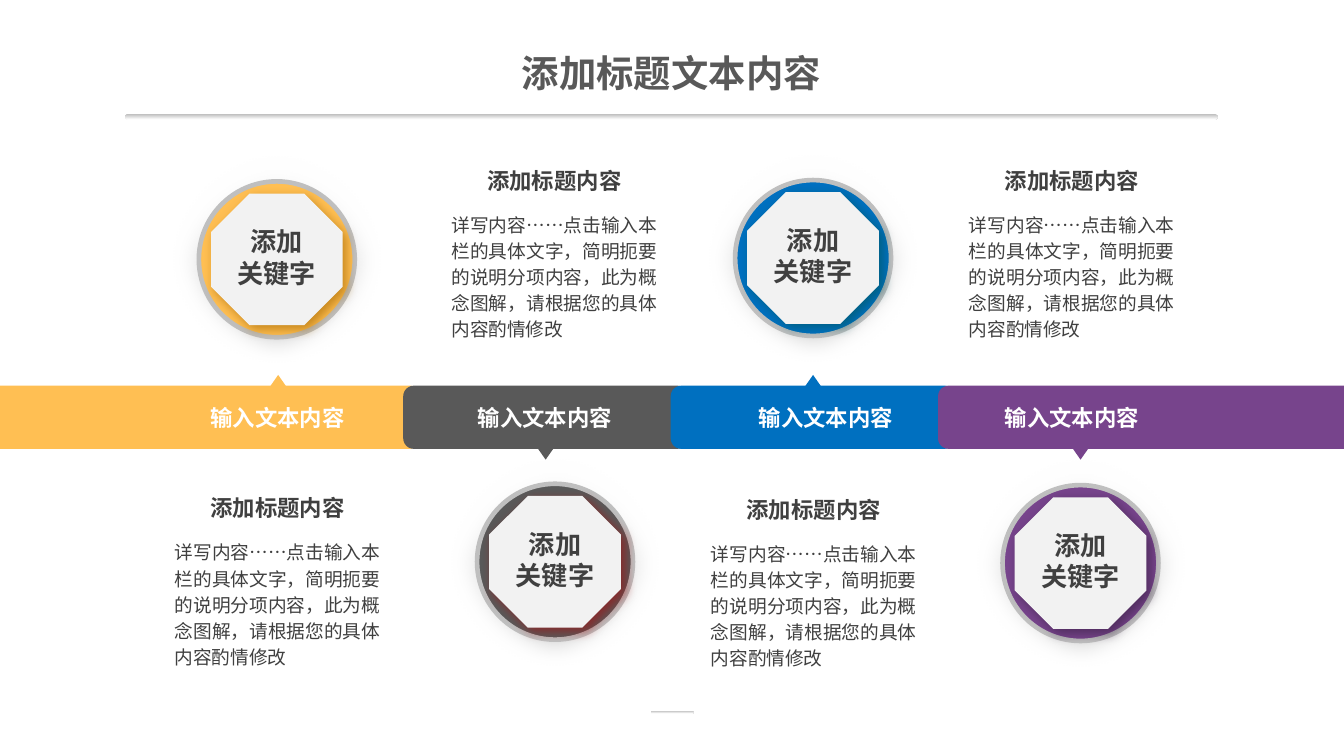
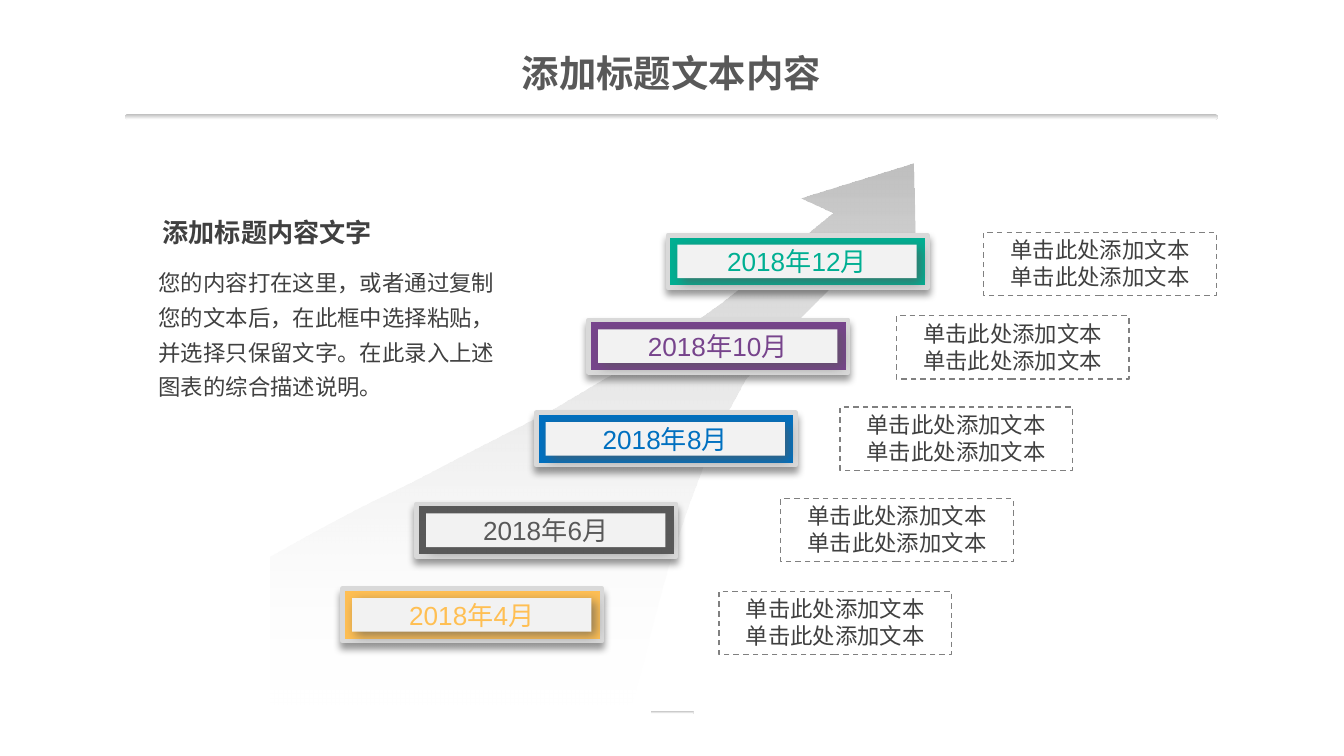
from lxml import etree
from pptx import Presentation
from pptx.dml.color import RGBColor
from pptx.enum.dml import MSO_LINE
from pptx.enum.shapes import MSO_SHAPE
from pptx.enum.text import MSO_ANCHOR, MSO_AUTO_SIZE, PP_ALIGN
from pptx.oxml.ns import qn
from pptx.util import Inches, Pt

ROUNDED, OVAL = MSO_SHAPE.ROUNDED_RECTANGLE, MSO_SHAPE.OVAL
TRIANGLE, OCTAGON, RECTANGLE = MSO_SHAPE.ISOSCELES_TRIANGLE, MSO_SHAPE.OCTAGON, MSO_SHAPE.RECTANGLE
LEFT, CENTER, JUSTIFY = PP_ALIGN.LEFT, PP_ALIGN.CENTER, PP_ALIGN.JUSTIFY
TOP, MIDDLE = MSO_ANCHOR.TOP, MSO_ANCHOR.MIDDLE
GROW, FIXED = MSO_AUTO_SIZE.SHAPE_TO_FIT_TEXT, MSO_AUTO_SIZE.NONE
DASH = MSO_LINE.DASH

WHITE = RGBColor(0xFF, 0xFF, 0xFF)
SILVER = RGBColor(0xBF, 0xBF, 0xBF)
PALE = RGBColor(0xF2, 0xF2, 0xF2)
FRAME = RGBColor(0xD9, 0xD9, 0xD9)
MID_GRAY = RGBColor(0x80, 0x80, 0x80)
BODY = RGBColor(0x40, 0x40, 0x40)
GRAY = RGBColor(0x59, 0x59, 0x59)
ORANGE = RGBColor(0xFF, 0xBF, 0x53)
BLUE = RGBColor(0x00, 0x70, 0xC0)
PURPLE = RGBColor(0x77, 0x44, 0x8C)
GREEN = RGBColor(0x00, 0xAF, 0x92)
BLACK = RGBColor(0x00, 0x00, 0x00)
BROWN = RGBColor(0xA9, 0x6A, 0x00)
RED = RGBColor(0xA2, 0x10, 0x11)
TEAL = RGBColor(0x00, 0x59, 0x62)
PLUM = RGBColor(0x3C, 0x22, 0x46)

LATIN_FONT = "Arial"
CJK_FONT = "Noto Sans CJK SC"


def style_shape(shape, fill=None, gradient=None, line=None, width=2.5, shadow=None):
    shape.shadow.inherit = False
    if gradient:
        shape.fill.gradient()
        shape.fill.gradient_angle = 270
        for stop, color, position in zip(shape.fill.gradient_stops, gradient, (0, 1)):
            stop.color.rgb = color
            stop.position = position
    elif fill is None:
        shape.fill.background()
    else:
        shape.fill.solid()
        shape.fill.fore_color.rgb = fill
    if line is None:
        shape.line.fill.background()
    else:
        shape.line.color.rgb = line
        shape.line.width = Pt(width)
    if shadow:
        color, opacity, blur, distance, angle = shadow
        effects = shape._element.spPr.find(qn("a:effectLst"))
        outer = etree.SubElement(effects, qn("a:outerShdw"), blurRad=str(Pt(blur)),
                                 dist=str(Pt(distance)), dir=str(angle * 60000),
                                 algn="ctr", rotWithShape="0")
        tint = etree.SubElement(outer, qn("a:srgbClr"), val=str(color))
        etree.SubElement(tint, qn("a:alpha"), val=str(opacity * 1000))
    return shape


def write_text(shape, lines, size, color, bold=False, align=CENTER, font=CJK_FONT,
               insets=(0, 0), anchor=TOP, auto_size=GROW, spacing=None):
    frame = shape.text_frame
    horizontal, vertical = (Inches(inset) for inset in insets)
    frame_format = {"word_wrap": True, "auto_size": auto_size, "vertical_anchor": anchor,
                    "margin_left": horizontal, "margin_right": horizontal,
                    "margin_top": vertical, "margin_bottom": vertical}
    for name, value in frame_format.items():
        setattr(frame, name, value)
    frame.text = "\n".join(lines)
    for paragraph in frame.paragraphs:
        paragraph.alignment = align
        paragraph.line_spacing = spacing
        run = paragraph.runs[0]
        for name, value in {"size": Pt(size), "bold": bold, "name": font}.items():
            setattr(run.font, name, value)
        run.font.color.rgb = color
        etree.SubElement(run._r.get_or_add_rPr(), qn("a:ea"), typeface=CJK_FONT)


presentation = Presentation()
presentation.slide_width = Inches(10)
presentation.slide_height = Inches(10 * 9 / 16)
blank = presentation.slide_layouts[6]

slides = []
for number in range(2):
    slide = presentation.slides.add_slide(blank)
    for left, top, width, height in ((0.93, 0.85, 8.13, 0.04), (4.84, 5.29, 0.32, 0.02)):
        rule = slide.shapes.add_shape(ROUNDED, Inches(left), Inches(top), Inches(width), Inches(height))
        rule.adjustments[0] = 0.5
        style_shape(rule, gradient=(SILVER, WHITE))
    title = slide.shapes.add_textbox(Inches(3.07), Inches(0.33), Inches(3.85), Inches(0.41))
    write_text(title, ["添加标题文本内容"], 20, GRAY, bold=True, font=LATIN_FONT, insets=(0.07, 0.04))
    slides.append(slide)
band_slide, arrow_slide = slides

shapes = band_slide.shapes
segments = [
    (ORANGE, BROWN, -0.12, 3.25, 2.0, 2.79, 0, 1.41, (1.26, 1.13), (1.3, 4.0)),
    (GRAY, RED, 3.0, 2.12, 3.99, 3.32, 180, 3.4, (3.33, 3.38), (3.36, 1.56)),
    (BLUE, TEAL, 4.99, 2.12, 5.98, 2.79, 0, 5.49, (5.25, 1.12), (5.29, 4.01)),
    (PURPLE, PLUM, 6.98, 3.14, 7.97, 3.32, 180, 7.32, (7.24, 3.39), (7.21, 1.56)),
]
for (color, shade, bar_left, bar_width, pointer_left, pointer_top, turn, label_left,
     (disc_left, disc_top), (detail_left, detail_top)) in segments:
    bar = shapes.add_shape(ROUNDED, Inches(bar_left), Inches(2.87), Inches(bar_width), Inches(0.47))
    style_shape(bar, fill=color)
    pointer = shapes.add_shape(TRIANGLE, Inches(pointer_left), Inches(pointer_top), Inches(0.14), Inches(0.1))
    pointer.rotation = turn
    style_shape(pointer, fill=color)

    label = shapes.add_textbox(Inches(label_left), Inches(3.01), Inches(1.31), Inches(0.2))
    write_text(label, ["输入文本内容"], 12, WHITE, bold=True)
    detail = shapes.add_textbox(Inches(detail_left), Inches(detail_top), Inches(1.53), Inches(0.98))
    write_text(detail, ["详写内容……点击输入本栏的具体文字，简明扼要的说明分项内容，此为概念图解，请根据您的具体内容酌情修改"],
               10, BODY, align=JUSTIFY, spacing=Pt(14))
    heading = shapes.add_textbox(Inches(detail_left + 0.11), Inches(detail_top - 0.32), Inches(1.31), Inches(0.2))
    write_text(heading, ["添加标题内容"], 12, BODY, bold=True)

    halo = shapes.add_shape(OVAL, Inches(disc_left), Inches(disc_top), Inches(1.6), Inches(1.6))
    style_shape(halo, gradient=(WHITE, SILVER))
    etree.SubElement(halo._element.spPr.find(qn("a:effectLst")), qn("a:softEdge"), rad=str(Inches(0.18)))
    disc = shapes.add_shape(OVAL, Inches(disc_left + 0.22), Inches(disc_top + 0.22), Inches(1.16), Inches(1.16))
    style_shape(disc, fill=color, line=SILVER)
    plate = shapes.add_shape(OCTAGON, Inches(disc_left + 0.31), Inches(disc_top + 0.31), Inches(0.98), Inches(0.98))
    style_shape(plate, fill=PALE, shadow=(shade, 64, 6, 3, 45))
    keyword = shapes.add_textbox(Inches(disc_left + 0.31), Inches(disc_top + 0.49), Inches(0.98), Inches(0.6))
    write_text(keyword, ["添加", "关键字"], 14, BODY, bold=True, insets=(0.12, 0.06))

shapes = arrow_slide.shapes
arrow_outline = [
    (2.01, 4.14), (2.35, 3.95), (2.69, 3.77), (3.06, 3.59), (3.52, 3.35), (4.09, 3.06),
    (4.46, 2.84), (4.71, 2.7), (5.05, 2.48), (5.36, 2.26), (5.64, 2.04), (5.86, 1.86),
    (6.19, 1.59), (5.95, 1.48), (6.79, 1.22), (6.81, 1.95), (6.55, 1.78), (6.22, 2.1),
    (5.82, 2.5), (5.54, 2.83), (5.41, 3.07), (5.28, 3.32), (5.2, 3.55), (5.12, 3.76),
    (4.98, 4.18), (4.87, 4.58), (4.79, 4.9), (4.69, 5.26), (2.01, 5.26),
]
points = [(Inches(x), Inches(y)) for x, y in arrow_outline]
builder = shapes.build_freeform(*points[0])
builder.add_line_segments(points[1:], close=True)
arrow = style_shape(builder.convert_to_shape(), gradient=(SILVER, WHITE))
fading_color = arrow._element.spPr.findall(".//" + qn("a:srgbClr"))[-1]
etree.SubElement(fading_color, qn("a:alpha"), val="0")

summary = shapes.add_textbox(Inches(1.11), Inches(1.9), Inches(2.78), Inches(0.99))
write_text(summary, ["您的内容打在这里，或者通过复制您的文本后，在此框中选择粘贴，并选择只保留文字。在此录入上述图表的综合描述说明。"],
           12, BODY, align=LEFT, insets=(0.07, 0.04), auto_size=FIXED, spacing=1.3)
summary_heading = shapes.add_textbox(Inches(1.14), Inches(1.49), Inches(2.37), Inches(0.48))
write_text(summary_heading, ["添加标题内容文字"], 14, BODY, bold=True, align=LEFT,
           insets=(0.07, 0.04), anchor=MIDDLE, auto_size=FIXED)

milestones = [
    ("2018年4月", ORANGE, 2.55, 4.38, 5.35, 4.4),
    ("2018年6月", GRAY, 3.1, 3.75, 5.81, 3.71),
    ("2018年8月", BLUE, 3.99, 3.07, 6.25, 3.03),
    ("2018年10月", PURPLE, 4.38, 2.38, 6.67, 2.35),
    ("2018年12月", GREEN, 4.97, 1.75, 7.32, 1.73),
]
for date, color, left, top, note_left, note_top in milestones:
    note = shapes.add_shape(RECTANGLE, Inches(note_left), Inches(note_top), Inches(1.73), Inches(0.47))
    style_shape(note, line=MID_GRAY, width=0.75)
    note.line.dash_style = DASH
    write_text(note, ["单击此处添加文本"] * 2, 12, BODY, insets=(0.07, 0.03))

    frame = shapes.add_shape(ROUNDED, Inches(left), Inches(top), Inches(1.93), Inches(0.39))
    style_shape(frame, fill=color, line=FRAME, shadow=(BLACK, 40, 4, 3, 90))
    plate = shapes.add_shape(ROUNDED, Inches(left + 0.07), Inches(top + 0.07), Inches(1.78), Inches(0.25))
    style_shape(plate, fill=PALE, shadow=(GRAY, 64, 6, 3, 45))
    write_text(plate, [date], 14, color, font=LATIN_FONT, insets=(0.1, 0.05), anchor=MIDDLE, auto_size=FIXED)
    for shape in (frame, plate):
        shape.adjustments[0] = 0

presentation.save("out.pptx")
